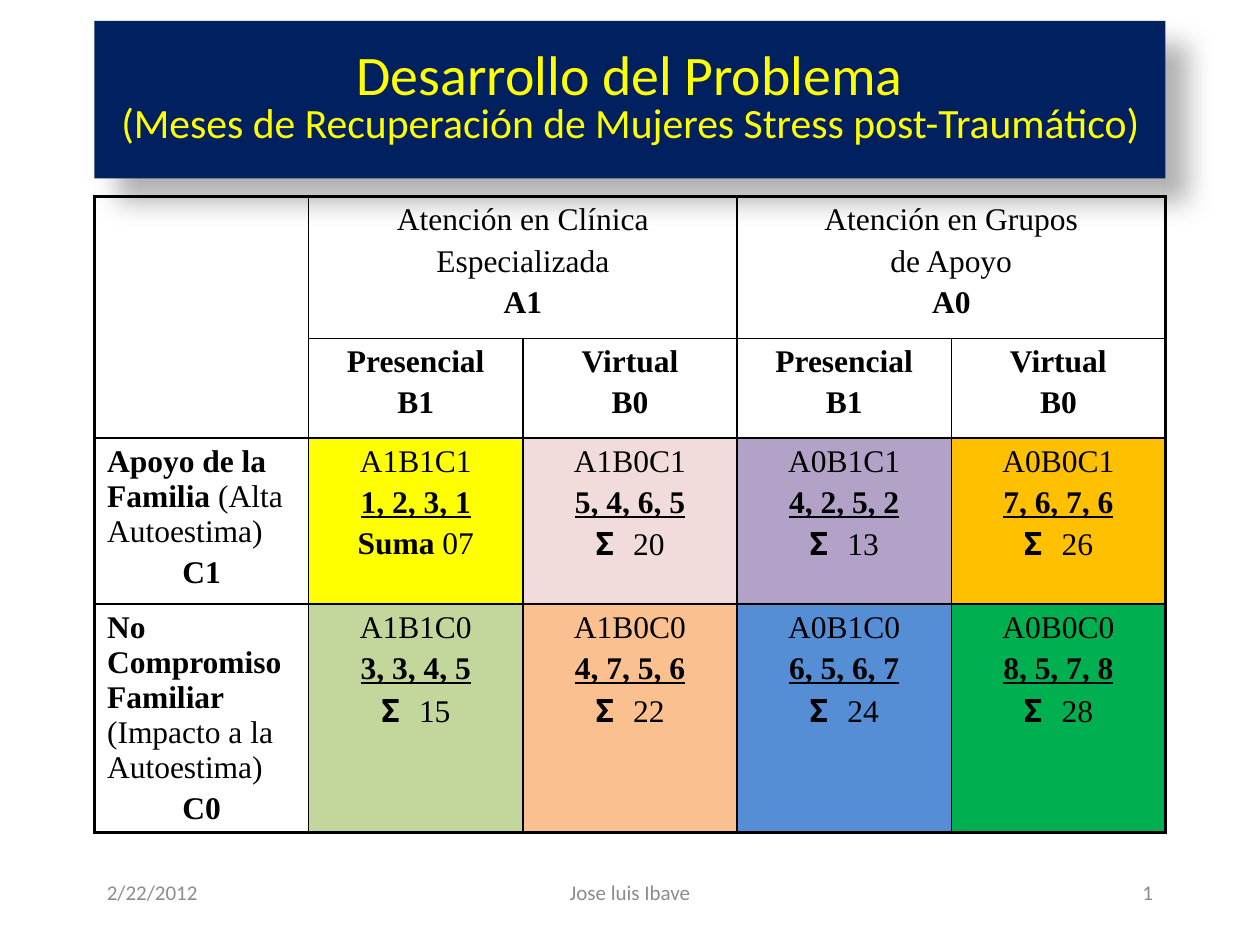
from lxml import etree
from pptx import Presentation
from pptx.dml.color import RGBColor
from pptx.enum import shapes, text
from pptx.oxml.ns import qn
from pptx.util import Pt

THEME = {
    "title_font": "Calibri", "table_font": "Times New Roman", "symbol_font": "DejaVu Sans Mono",
    "title": 31.9, "subtitle": 23.8, "table": 18, "footer": 12,
    "navy": "002060", "yellow": "FFFF00", "black": "000000", "gray": "8C8C8C",
    "outer_line": 2.25, "inner_line": 1,
}

TITLE = [("Desarrollo del Problema", "title"),
         ("(Meses de Recuperación de Mujeres Stress post-Traumático)", "subtitle")]
TREATMENTS = [("Atención en Clínica", "Especializada", "A1"),
              ("Atención en Grupos", "de Apoyo", "A0")]
MODES = [("Presencial", "B1"), ("Virtual", "B0")]
FAMILIES = [("Apoyo de la Familia ", "(Alta Autoestima)", "C1"),
            ("No Compromiso Familiar ", "(Impacto a la Autoestima)", "C0")]
RESULTS = [
    [("1, 2, 3, 1", "07", "FFFF00"), ("5, 4, 6, 5", "20", "F2DCDB"),
     ("4, 2, 5, 2", "13", "B3A2C7"), ("7, 6, 7, 6", "26", "FFC000")],
    [("3, 3, 4, 5", "15", "C3D69B"), ("4, 7, 5, 6", "22", "FAC090"),
     ("6, 5, 6, 7", "24", "558ED5"), ("8, 5, 7, 8", "28", "00B050")],
]
FOOTERS = [("2/22/2012", 54, 150, "LEFT"), ("Jose luis Ibave", 246, 228, "CENTER"),
           ("1", 516, 150, "RIGHT")]

LEFT, WIDTH = 54, 612
TABLE_TOP = 112.3
ROW_HEIGHTS = [81, 57, 95, 130]
COLUMN_COUNT = 5


def color(name):
    return RGBColor.from_string(THEME.get(name, name))


def set_font(font, family, size, fill):
    font.name = THEME[family]
    font.size = Pt(THEME[size])
    font.color.rgb = color(fill)


def add_title(slide):
    shape = slide.shapes.add_shape(shapes.MSO_SHAPE.RECTANGLE, Pt(LEFT), Pt(12), Pt(WIDTH), Pt(90))
    shape.shadow.inherit = False
    shape.fill.solid()
    shape.fill.fore_color.rgb = color("navy")
    shape.line.fill.background()
    effects = shape._element.spPr.find(qn("a:effectLst"))
    shadow = etree.SubElement(effects, qn("a:outerShdw"), blurRad=str(Pt(15)), dist=str(Pt(18)),
                              dir="2700000", algn="tl", rotWithShape="0")
    shade = etree.SubElement(shadow, qn("a:srgbClr"), val=THEME["black"])
    etree.SubElement(shade, qn("a:alpha"), val="30000")
    frame = shape.text_frame
    frame.word_wrap = True
    frame.vertical_anchor = text.MSO_ANCHOR.MIDDLE
    for index, (line, size) in enumerate(TITLE):
        paragraph = frame.add_paragraph() if index else frame.paragraphs[0]
        paragraph.text = line
        paragraph.alignment = text.PP_ALIGN.CENTER
        paragraph.line_spacing = 0.8
        set_font(paragraph.font, "title_font", size, "yellow")


def write_cell(cell, paragraphs):
    frame = cell.text_frame
    for index, (alignment, runs) in enumerate(paragraphs):
        paragraph = frame.add_paragraph() if index else frame.paragraphs[0]
        paragraph.alignment = getattr(text.PP_ALIGN, alignment)
        paragraph.space_before = Pt(3.6)
        for words, style in runs:
            run = paragraph.add_run()
            run.text = words
            set_font(run.font, "symbol_font" if "Σ" in words else "table_font", "table", "black")
            run.font.bold = "b" in style
            run.font.underline = "u" in style


def centered(*lines):
    return [("CENTER", [line]) for line in lines]


def border_cell(cell, row, column):
    properties = cell._tc.get_or_add_tcPr()
    outer = {
        "L": column == 0,
        "R": column + cell.span_width == COLUMN_COUNT,
        "T": row == 0,
        "B": row + cell.span_height == len(ROW_HEIGHTS),
    }
    for side, is_outer in outer.items():
        width = THEME["outer_line" if is_outer else "inner_line"]
        line = etree.SubElement(properties, qn(f"a:ln{side}"), w=str(Pt(width)))
        fill = etree.SubElement(line, qn("a:solidFill"))
        etree.SubElement(fill, qn("a:srgbClr"), val=THEME["black"])


def fill_contents(table):
    fills = {}
    for group, (first, second, code) in enumerate(TREATMENTS):
        start = 1 + group * len(MODES)
        write_cell(table.cell(0, start), centered((first, ""), (second, ""), (code, "b")))
        for offset, (mode, mode_code) in enumerate(MODES):
            write_cell(table.cell(1, start + offset), centered((mode, "b"), (mode_code, "b")))
    for row, (family, results) in enumerate(zip(FAMILIES, RESULTS), 2):
        name, detail, family_code = family
        write_cell(table.cell(row, 0), [("LEFT", [(name, "b"), (detail, "")])]
                   + centered((family_code, "b")))
        for index, (months, total, fill) in enumerate(results):
            group, mode = divmod(index, len(MODES))
            code = TREATMENTS[group][2] + MODES[mode][1] + family_code
            is_first = row == 2 and index == 0
            sum_runs = [("Suma", "b"), (" " + total, "")] if is_first else [("Σ ", "b"), (total, "")]
            write_cell(table.cell(row, index + 1),
                       centered((code, ""), (months, "bu")) + [("CENTER", sum_runs)])
            fills[row, index + 1] = fill
    return fills


def add_table(slide):
    table = slide.shapes.add_table(len(ROW_HEIGHTS), COLUMN_COUNT, Pt(LEFT), Pt(TABLE_TOP),
                                   Pt(WIDTH), Pt(sum(ROW_HEIGHTS))).table
    table.first_row = table.horz_banding = False
    for column in table.columns:
        column.width = Pt(WIDTH / COLUMN_COUNT)
    for row, height in zip(table.rows, ROW_HEIGHTS):
        row.height = Pt(height)
    table.cell(0, 0).merge(table.cell(1, 0))
    for start in (1, 3):
        table.cell(0, start).merge(table.cell(0, start + 1))
    fills = fill_contents(table)
    for row in range(len(ROW_HEIGHTS)):
        for column in range(COLUMN_COUNT):
            cell = table.cell(row, column)
            if not cell.is_spanned:
                border_cell(cell, row, column)
            if (row, column) in fills:
                cell.fill.solid()
                cell.fill.fore_color.rgb = color(fills[row, column])
            else:
                cell.fill.background()


def add_footers(slide):
    for words, left, width, alignment in FOOTERS:
        frame = slide.shapes.add_textbox(Pt(left), Pt(492), Pt(width), Pt(36)).text_frame
        frame.word_wrap = True
        frame.vertical_anchor = text.MSO_ANCHOR.MIDDLE
        paragraph = frame.paragraphs[0]
        paragraph.text = words
        paragraph.alignment = getattr(text.PP_ALIGN, alignment)
        set_font(paragraph.font, "title_font", "footer", "gray")


def main():
    presentation = Presentation()
    presentation.slide_width, presentation.slide_height = Pt(720), Pt(540)
    slide = presentation.slides.add_slide(presentation.slide_layouts[6])
    add_title(slide)
    add_table(slide)
    add_footers(slide)
    presentation.save("out.pptx")


if __name__ == "__main__":
    main()
